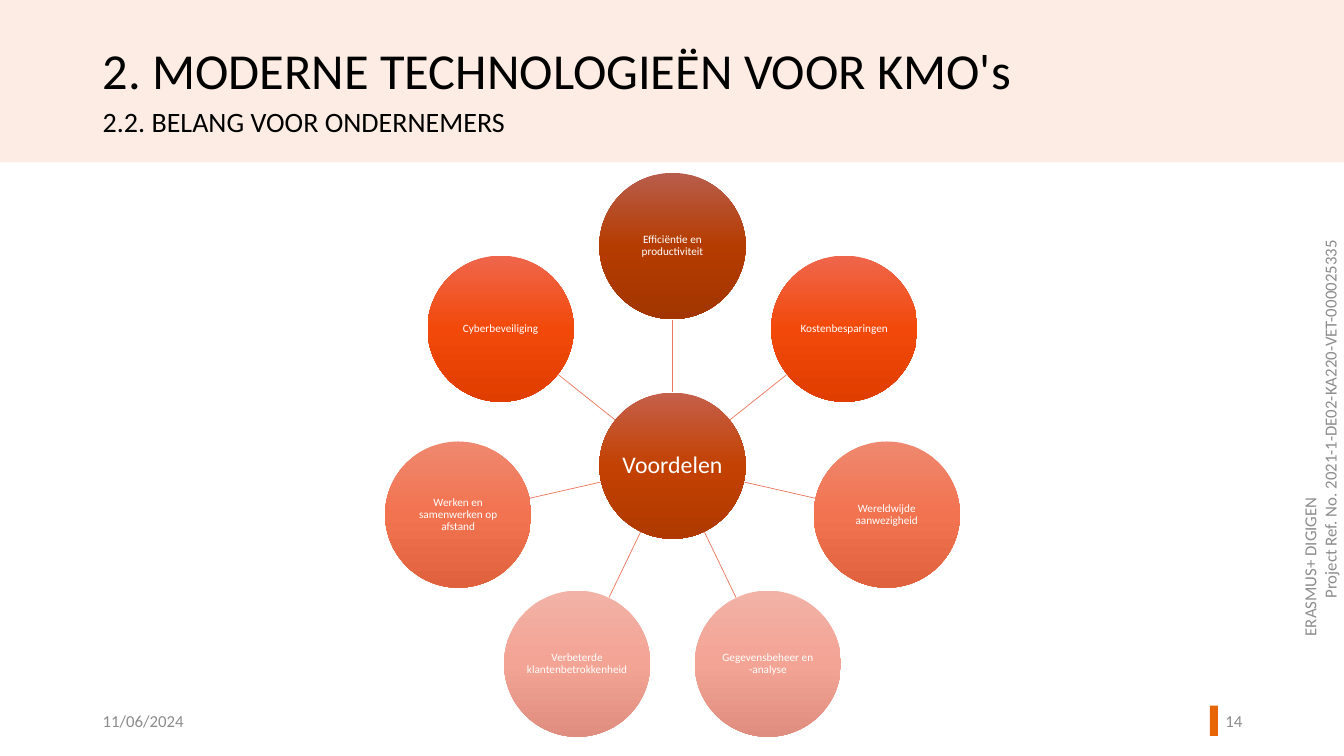
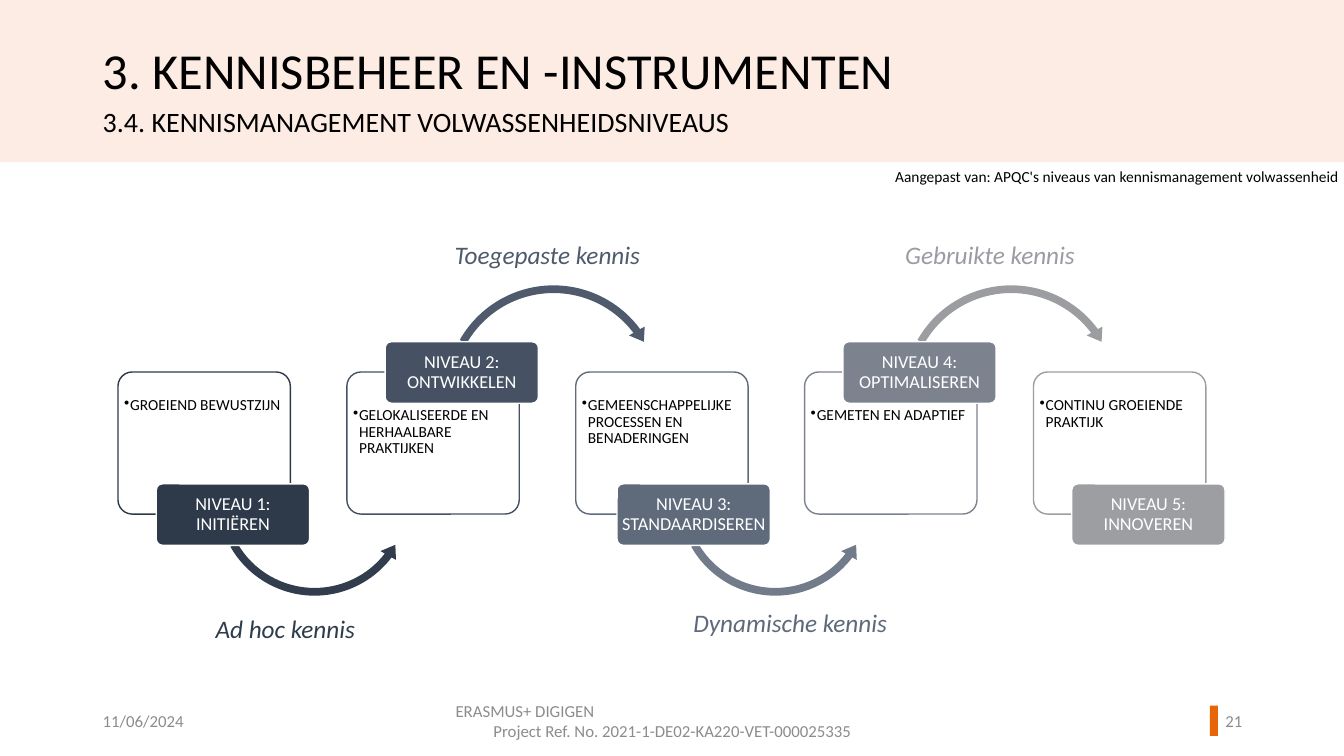
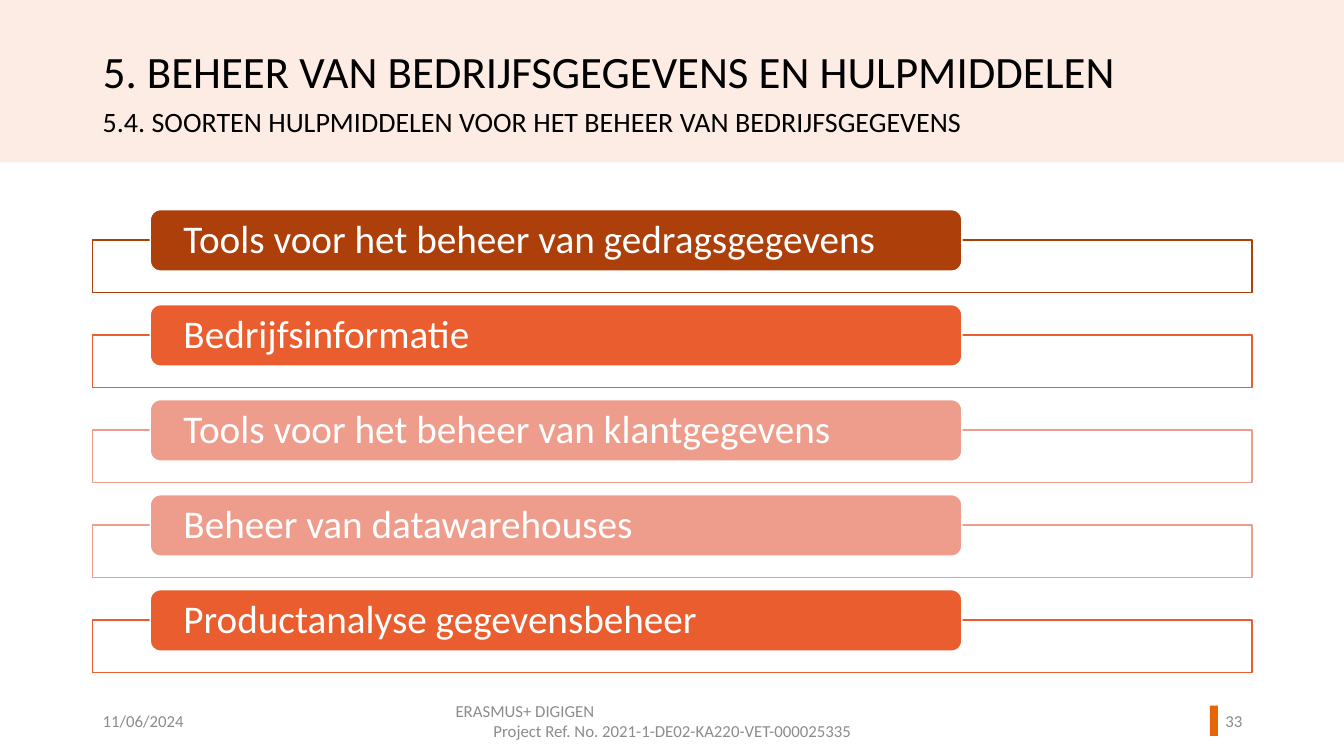
"""Build three training slides on technology, knowledge levels and data tools."""
from dataclasses import dataclass
from math import cos, pi, sin
from typing import Optional

from lxml import etree
from pptx import Presentation
from pptx.dml.color import RGBColor
from pptx.enum import shapes as es, text as et
from pptx.oxml.ns import qn
from pptx.util import Inches, Pt

LEFT, MID, RIGHT = et.PP_ALIGN.LEFT, et.PP_ALIGN.CENTER, et.PP_ALIGN.RIGHT
TOP, CENTER = et.MSO_ANCHOR.TOP, et.MSO_ANCHOR.MIDDLE
FORM = es.MSO_SHAPE


@dataclass(frozen=True)
class Theme:
    font: str = "Calibri"
    band: str = "FDECE3"
    mark: str = "E86507"
    ink: str = "000000"
    pale: str = "FFFFFF"
    grey: str = "8C8C8C"
    spoke: str = "EB775E"
    rust: str = "AC3F0A"
    flame: str = "EA5D2E"
    blush: str = "EE9D8C"
    hub_fade: tuple = ("C5604B", "C34102", "AF3900")
    rust_fade: tuple = ("B85D4B", "B53C01", "A23500")
    flame_fade: tuple = ("EF664C", "F2490A", "E03D00")
    coral_fade: tuple = ("EF886F", "F27350", "E0613E")
    blush_fade: tuple = ("F2B2A6", "F3A495", "DE8D7E")
    title: int = 36
    title_long: int = 32
    sub: int = 20
    foot: int = 12
    hub: int = 17
    node: int = 8
    note: int = 11
    badge: int = 13
    label: int = 18
    row: int = 28


T = Theme()


@dataclass(frozen=True)
class Node:
    text: str
    fade: tuple


@dataclass(frozen=True)
class Arc:
    tint: str
    text: str
    left: float
    top: float
    ink: str


@dataclass(frozen=True)
class Level:
    name: str
    text: str
    tint: str
    arc: Optional[Arc] = None
    shift: float = 0


@dataclass(frozen=True)
class Row:
    text: str
    tint: str


NODES = (
    Node("Efficiëntie en productiviteit", T.rust_fade),
    Node("Kostenbesparingen", T.flame_fade),
    Node("Wereldwijde aanwezigheid", T.coral_fade),
    Node("Gegevensbeheer en -analyse", T.blush_fade),
    Node("Verbeterde klantenbetrokkenheid", T.blush_fade),
    Node("Werken en samenwerken op afstand", T.coral_fade),
    Node("Cyberbeveiliging", T.flame_fade),
)
LEVELS = (
    Level("NIVEAU 1: INITIËREN", "GROEIEND BEWUSTZIJN", "2E3949",
          Arc("313C4C", "Ad hoc kennis", 2.04, 6.04, "2F3C4C")),
    Level("NIVEAU 2: ONTWIKKELEN", "GELOKALISEERDE EN HERHAALBARE PRAKTIJKEN", "465163",
          Arc("4F5B6D", "Toegepaste kennis", 4.41, 2.33, "4E5B6C")),
    Level("NIVEAU 3: STANDAARDISEREN", "GEMEENSCHAPPELIJKE PROCESSEN EN BENADERINGEN", "5F6A7B",
          Arc("727B8A", "Dynamische kennis", 6.78, 5.98, "5E6979"), 0.03),
    Level("NIVEAU 4: OPTIMALISEREN", "GEMETEN EN ADAPTIEF", "7C838F",
          Arc("9B9DA1", "Gebruikte kennis", 8.88, 2.33, "9A9CA2")),
    Level("NIVEAU 5: INNOVEREN", "CONTINU GROEIENDE PRAKTIJK", "9C9EA1"),
)
ROWS = (
    Row("Tools voor het beheer van gedragsgegevens", T.rust),
    Row("Bedrijfsinformatie", T.flame),
    Row("Tools voor het beheer van klantgegevens", T.blush),
    Row("Beheer van datawarehouses", T.blush),
    Row("Productanalyse gegevensbeheer", T.flame),
)


def put(item, words: str, *, size: int, tint: str = T.ink, aligns: tuple = (LEFT,),
        anchor=TOP, insets: tuple = (0.1, 0.05, 0.1, 0.05), lead: float = 1.0,
        slant: bool = False, dot: bool = False) -> None:
    """Write words into a shape, one paragraph a line."""
    frame = item.text_frame
    frame.auto_size = et.MSO_AUTO_SIZE.NONE
    frame.word_wrap = True
    frame.vertical_anchor = anchor
    (frame.margin_left, frame.margin_top,
     frame.margin_right, frame.margin_bottom) = map(Inches, insets)
    for i, line in enumerate(words.split("\n")):
        para = frame.paragraphs[0] if i == 0 else frame.add_paragraph()
        para.alignment = aligns[i % len(aligns)]
        para.line_spacing = lead
        if dot:
            props = para._p.get_or_add_pPr()
            props.set("marL", str(Inches(0.06)))
            props.set("indent", str(-Inches(0.06)))
            etree.SubElement(props, qn("a:buChar")).set("char", "•")
        run = para.add_run()
        run.text = line
        font = run.font
        font.name, font.size, font.italic = T.font, Pt(size), slant
        font.color.rgb = RGBColor.from_string(tint)


def label(slide, box: tuple, words: str, **style):
    """Add a text box."""
    item = slide.shapes.add_textbox(*map(Inches, box))
    put(item, words, **style)
    return item


def shape(slide, form, box: tuple, fill: str, line: Optional[str] = None,
          adjust: tuple = (), alpha: int = 100):
    """Add a preset shape with a plain fill."""
    item = slide.shapes.add_shape(form, *map(Inches, box))
    item.shadow.inherit = False
    for i, value in enumerate(adjust):
        item.adjustments[i] = value
    item.fill.solid()
    item.fill.fore_color.rgb = RGBColor.from_string(fill)
    if alpha < 100:
        tone = item.element.spPr.find(qn("a:solidFill")).find(qn("a:srgbClr"))
        etree.SubElement(tone, qn("a:alpha")).set("val", str(alpha * 1000))
    if line:
        item.line.color.rgb = RGBColor.from_string(line)
        item.line.width = Pt(1)
    else:
        item.line.fill.background()
    return item


def fade(item, tones: tuple) -> None:
    """Fill a shape with an even gradient from top to bottom."""
    item.fill.gradient()
    item.fill.gradient_angle = 270
    stops = item.element.spPr.find(qn("a:gradFill")).find(qn("a:gsLst"))
    stops.clear()
    for i, tone in enumerate(tones):
        stop = etree.SubElement(stops, qn("a:gs"))
        stop.set("pos", str(100000 * i // (len(tones) - 1)))
        etree.SubElement(stop, qn("a:srgbClr")).set("val", tone)


def spoke(slide, start: tuple, end: tuple) -> None:
    """Draw a thin straight line."""
    item = slide.shapes.add_connector(es.MSO_CONNECTOR.STRAIGHT, *map(Inches, start + end))
    item.line.color.rgb = RGBColor.from_string(T.spoke)
    item.line.width = Pt(0.5)
    etree.SubElement(item.element.spPr, qn("a:effectLst"))


def frame(deck, page: int, head: str, sub: str, size: int = T.title,
          top: float = 0.41, side: bool = False):
    """Start a slide with its title, subtitle and footer."""
    slide = deck.slides.add_slide(deck.slide_layouts[5])
    title = slide.shapes.title
    title.left, title.top, title.width, title.height = map(Inches, (0.92, top, 10.85, 0.85))
    put(title, head, size=size, lead=0.9)
    label(slide, (0.92, 1.03, 10.85, 0.85), sub, size=T.sub, lead=0.9)
    foot = dict(size=T.foot, tint=T.grey, anchor=CENTER)
    label(slide, (0.92, 6.95, 3, 0.4), "11/06/2024", **foot)
    spot = (10.84, 3.96) if side else (4.42, 6.95)
    ref = label(slide, spot + (4.5, 0.4),
                "ERASMUS+ DIGIGEN\nProject Ref. No. 2021-1-DE02-KA220-VET-000025335",
                aligns=(LEFT, MID), **foot)
    ref.rotation = 270 if side else 0
    label(slide, (11.77, 6.95, 0.65, 0.4), str(page), aligns=(RIGHT,), **foot)
    return slide


def brand(deck, slide) -> None:
    """Move the shared band and page mark to the layout."""
    base = deck.slide_layouts[5].placeholders[0].element
    for box, tint in (((0, 0, 13.33, 1.61), T.band), ((12, 7, 0.08, 0.3), T.mark)):
        base.addprevious(shape(slide, FORM.RECTANGLE, box, tint).element)


def disc(slide, x: float, y: float, node: Node, size: int) -> None:
    """Draw a round node about its centre."""
    wide = 1.45
    item = shape(slide, FORM.OVAL, (x - wide / 2, y - wide / 2, wide, wide), T.pale)
    fade(item, node.fade)
    put(item, node.text, size=size, tint=T.pale, aligns=(MID,), anchor=CENTER,
        insets=(0.01,) * 4, lead=0.9)


def wheel(slide) -> None:
    """Draw the hub and its ring of benefits."""
    x, y, reach, rim = 6.67, 4.62, 2.18, 0.73

    def polar(i: int, far: float) -> tuple:
        """Give the point at a distance along a spoke."""
        turn = 2 * pi * i / len(NODES)
        return x + far * sin(turn), y - far * cos(turn)

    disc(slide, x, y, Node("Voordelen", T.hub_fade), T.hub)
    for i, node in enumerate(NODES):
        spoke(slide, polar(i, rim), polar(i, reach - rim))
        disc(slide, *polar(i, reach), node, T.node)


def steps(slide) -> None:
    """Draw the levels with badges alternating low and high."""
    for i, level in enumerate(LEVELS):
        left, high = 1.17 + 2.27 * i, i % 2 == 1
        card = shape(slide, FORM.ROUNDED_RECTANGLE, (left, 3.69, 1.71, 1.41), T.pale,
                     level.tint, (0.1,), 90)
        put(card, level.text, size=T.note, lead=0.9, dot=True,
            insets=(0.02, 0.31 if high else 0.21, 0.02, 0.02))
        arc = level.arc
        if arc:
            form, wide, mid, turns = (
                (FORM.CIRCULAR_ARROW, 2.24, 3.9, (0.034, 4.252, 193.993, 125.755, 0.04)) if high
                else (FORM.LEFT_CIRCULAR_ARROW, 2.02, 4.95, (0.038, 4.755, 22.51, 90.245, 0.044)))
            spot = left + level.shift + 2.05 - 0.1 - wide / 2
            spot += 0.1 if high else 0
            shape(slide, form, (spot, mid - wide / 2, wide, wide), arc.tint, adjust=turns)
            label(slide, (arc.left, arc.top, 2.5, 0.4), arc.text,
                  size=T.label, tint=arc.ink, slant=True)
        badge = shape(slide, FORM.ROUNDED_RECTANGLE,
                      (left + 0.38 + level.shift, 3.39 if high else 4.8, 1.52, 0.61),
                      level.tint, T.pale, (0.1,))
        put(badge, level.name, size=T.badge, tint=T.pale, aligns=(MID,), anchor=CENTER,
            insets=(0.03, 0.02, 0.03, 0.02), lead=0.9)
    label(slide, (8.78, 1.61, 4.77, 0.29),
          "Aangepast van: APQC's niveaus van kennismanagement volwassenheid", size=T.note)


def bars(slide) -> None:
    """Draw the list of tools as tabs on open boxes."""
    gap = (6.15 - 2.38) / (len(ROWS) - 1)
    for i, row in enumerate(ROWS):
        top = 2.08 + gap * i
        shape(slide, FORM.RECTANGLE, (0.92, top + 0.3, 11.5, 0.52), T.pale, row.tint, alpha=90)
        tab = shape(slide, FORM.ROUNDED_RECTANGLE, (1.49, top, 8.05, 0.61), row.tint, T.pale)
        put(tab, row.text, size=T.row, tint=T.pale, anchor=CENTER,
            insets=(0.3, 0, 0.3, 0), lead=0.9)


def main() -> None:
    """Build and save the deck."""
    deck = Presentation()
    deck.slide_width, deck.slide_height = Inches(13.33), Inches(7.5)
    first = frame(deck, 14, "2. MODERNE TECHNOLOGIEËN VOOR KMO's",
                  "2.2. BELANG VOOR ONDERNEMERS", side=True)
    brand(deck, first)
    wheel(first)
    steps(frame(deck, 21, "3. KENNISBEHEER EN -INSTRUMENTEN",
                "3.4. KENNISMANAGEMENT VOLWASSENHEIDSNIVEAUS"))
    bars(frame(deck, 33, "5. BEHEER VAN BEDRIJFSGEGEVENS EN HULPMIDDELEN",
               "5.4. SOORTEN HULPMIDDELEN VOOR HET BEHEER VAN BEDRIJFSGEGEVENS",
               T.title_long, 0.44))
    deck.save("out.pptx")


if __name__ == "__main__":
    main()
